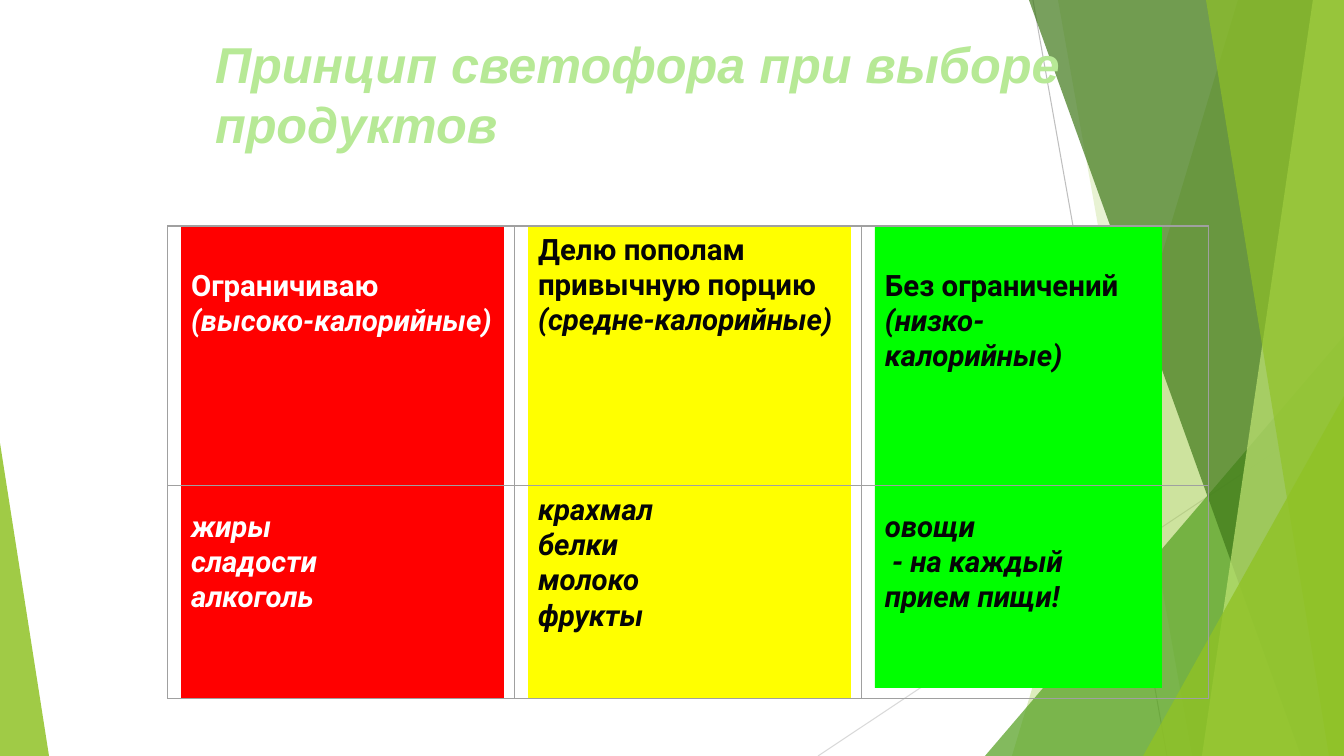
from collections import namedtuple
from dataclasses import dataclass

from lxml import etree
from pptx import Presentation
from pptx.dml.color import RGBColor
from pptx.enum.shapes import MSO_CONNECTOR, MSO_SHAPE
from pptx.enum.text import MSO_ANCHOR, PP_ALIGN
from pptx.oxml.ns import qn
from pptx.util import Emu, Pt

RECTANGLE = MSO_SHAPE.RECTANGLE
TRIANGLE = MSO_SHAPE.ISOSCELES_TRIANGLE
STRAIGHT = MSO_CONNECTOR.STRAIGHT
TOP, BOTTOM = MSO_ANCHOR.TOP, MSO_ANCHOR.BOTTOM
LEFT = PP_ALIGN.LEFT

SCALE = 12192000 / 1344

Box = namedtuple("Box", "x y w h")
Line = namedtuple("Line", "text italic")
Food = namedtuple("Food", "fill ink width heights insets advice examples")


@dataclass(frozen=True)
class Theme:
    title_font: str = "Arial"
    body_font: str = "Roboto"
    title_size: int = 36
    body_size: int = 21
    title: str = "B7E996"
    title_outline: str = "54A021"
    grid: str = "A0A0A0"
    ray: str = "BFBFBF"
    pale_ray: str = "D9D9D9"
    lime: str = "90C226"
    green: str = "54A021"
    forest: str = "3F7819"
    light: str = "C0E474"
    red: str = "FF0000"
    yellow: str = "FFFF00"
    go: str = "00FF00"
    white: str = "FFFFFF"
    black: str = "050507"


THEME = Theme()

FOODS = [
    Food(THEME.red, THEME.white, 323, (260, 213), (41, 22),
         [Line("Ограничиваю", False), Line("(высоко-калорийные)", True)],
         [Line("жиры", True), Line("сладости", True), Line("алкоголь", True)]),
    Food(THEME.yellow, THEME.black, 323, (260, 213), (5, 5),
         [Line("Делю пополам привычную порцию", False),
          Line("(средне-калорийные)", True)],
         [Line("крахмал", True), Line("белки", True),
          Line("молоко", True), Line("фрукты", True)]),
    Food(THEME.go, THEME.black, 287, (260, 202), (41, 22),
         [Line("Без ограничений", False), Line("(низко-калорийные)", True)],
         [Line("овощи", True), Line(" - на каждый прием пищи!", True)]),
]


def px(length):
    return Emu(round(length * SCALE))


def place(box):
    return [px(length) for length in box]


def rgb(colour):
    return RGBColor.from_string(colour)


def paint(shape, colour, opacity=100):
    shape.shadow.inherit = False
    shape.line.fill.background()
    shape.fill.solid()
    shape.fill.fore_color.rgb = rgb(colour)
    if opacity < 100:
        tint = shape.fill._xPr.find(qn("a:solidFill"))[0]
        etree.SubElement(tint, qn("a:alpha"), val=str(opacity * 1000))


def add_frame(slide, box, width):
    frame = slide.shapes.add_shape(RECTANGLE, *place(box))
    frame.shadow.inherit = False
    frame.fill.background()
    frame.line.color.rgb = rgb(THEME.grid)
    frame.line.width = Pt(width)


def add_ray(slide, start, end, colour):
    ray = slide.shapes.add_connector(STRAIGHT, *place(start), *place(end))
    ray.line.color.rgb = rgb(colour)
    ray.line.width = Pt(0.75)
    etree.SubElement(ray._element.spPr, qn("a:effectLst"))


def add_band(slide, box, top_x, bottom_x, colour, opacity):
    right, bottom = box.x + box.w, box.y + box.h
    outline = slide.shapes.build_freeform(box.x + top_x, box.y, SCALE)
    outline.add_line_segments(
        [(right, box.y), (right, bottom), (box.x + bottom_x, bottom)])
    paint(outline.convert_to_shape(), colour, opacity)


def add_corner(slide, box, left, width, height, apex, colour, opacity):
    corner = slide.shapes.add_shape(
        TRIANGLE,
        *place((box.x + left, box.y + box.h - height, width, height)))
    corner.adjustments[0] = apex
    paint(corner, colour, opacity)


def add_facets(slide, box):
    x, y, w, h = box
    add_ray(slide, (x + 1033, y), (x + 1167, y + h), THEME.ray)
    add_ray(slide, (x + w, y + 406), (x + 818, y + h), THEME.pale_ray)
    add_band(slide, box, 1238, 1012, THEME.lime, 30)
    add_band(slide, box, 1058, 1192, THEME.lime, 20)
    add_corner(slide, box, 985, 359, 420, 1, THEME.green, 72)
    add_band(slide, box, 1029, 1301, THEME.forest, 70)
    add_band(slide, box, 1313, 1202, THEME.light, 70)
    add_band(slide, box, 1206, 1329, THEME.lime, 65)
    add_corner(slide, box, 1143, 201, 360, 1, THEME.lime, 80)
    add_corner(slide, box, 0, 49, 313, 0, THEME.lime, 85)


def write(shape, lines, font, size, colour, anchor, inset=5):
    frame = shape.text_frame
    frame.word_wrap = True
    frame.vertical_anchor = anchor
    frame.margin_left, frame.margin_right = px(10), px(9)
    frame.margin_top, frame.margin_bottom = px(inset), px(5)
    for number, line in enumerate(lines):
        paragraph = frame.add_paragraph() if number else frame.paragraphs[0]
        paragraph.alignment = LEFT
        run = paragraph.add_run()
        run.text = line.text
        run.font.name = font
        run.font.size = Pt(size)
        run.font.bold = True
        run.font.italic = line.italic
        run.font.color.rgb = rgb(colour)


def add_title(slide, box):
    title = slide.shapes.add_textbox(*place(box))
    heading = Line("Принцип светофора при выборе продуктов", True)
    write(title, [heading], THEME.title_font, THEME.title_size,
          THEME.title, BOTTOM)
    properties = title.text_frame.paragraphs[0].runs[0].font._element
    outline = etree.Element(qn("a:ln"), w=str(Pt(1.75)))
    fill = etree.SubElement(outline, qn("a:solidFill"))
    etree.SubElement(fill, qn("a:srgbClr"), val=THEME.title_outline)
    properties.insert(0, outline)


def add_traffic_light(slide, box):
    column = box.w // len(FOODS)
    advice_height = 260
    rows = [(box.y, advice_height),
            (box.y + advice_height, box.h - advice_height)]
    for row, (top, height) in enumerate(rows):
        for number, food in enumerate(FOODS):
            left = box.x + number * column
            card = slide.shapes.add_shape(
                RECTANGLE,
                *place((left + 13, top, food.width, food.heights[row])))
            paint(card, food.fill)
            write(card, (food.advice, food.examples)[row], THEME.body_font,
                  THEME.body_size, food.ink, TOP, food.insets[row])
            add_frame(slide, Box(left, top, column, height), 0)
    add_frame(slide, box, 0.75)


def main():
    deck = Presentation()
    deck.slide_width, deck.slide_height = px(1344), px(756)
    slide = deck.slides.add_slide(deck.slide_layouts[6])
    add_facets(slide, Box(0, 0, 1344, 756))
    add_title(slide, Box(205, 33, 945, 126))
    add_traffic_light(slide, Box(168, 226, 1041, 473))
    deck.save("out.pptx")


if __name__ == "__main__":
    main()
